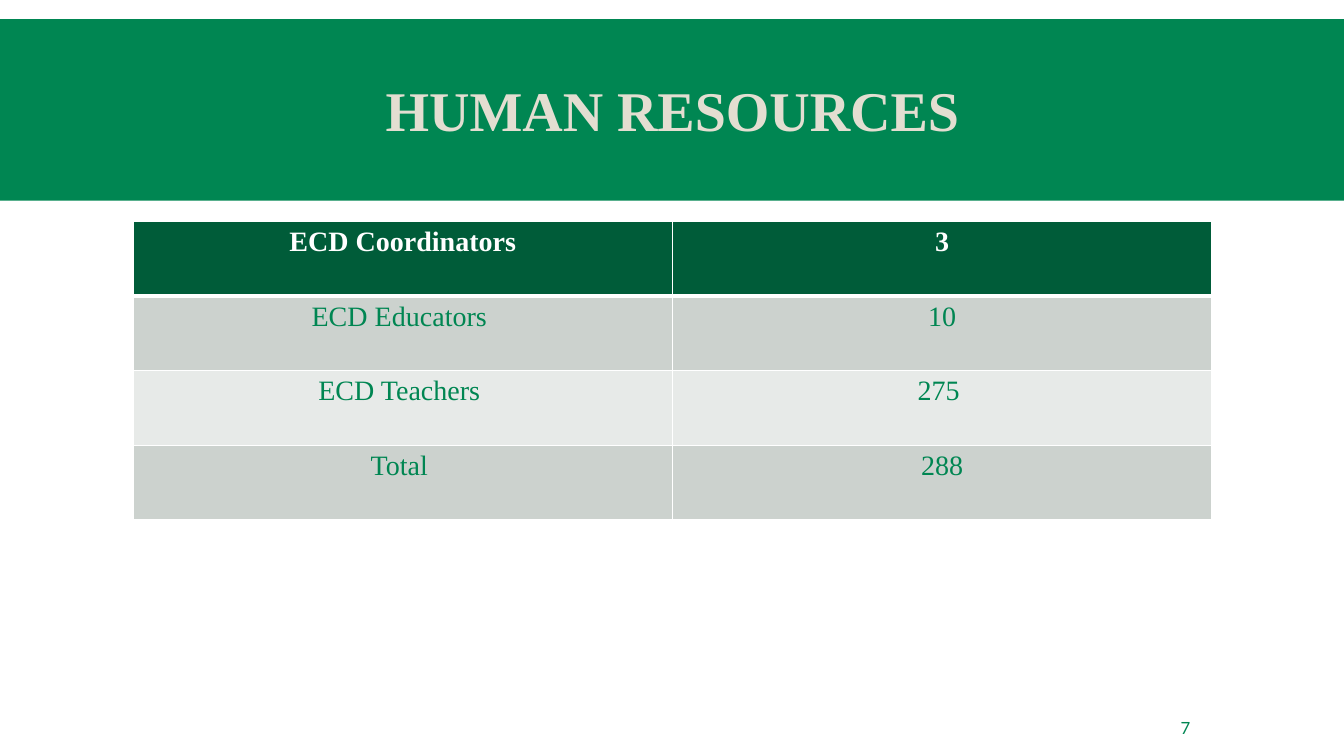
from lxml.etree import SubElement
from pptx import Presentation
from pptx.dml.color import RGBColor
from pptx.enum.shapes import MSO_SHAPE
from pptx.enum.text import MSO_ANCHOR, PP_ALIGN
from pptx.oxml.ns import qn
from pptx.util import Emu, Pt

COLORS = {
    "green": "008652",
    "dark": "005C39",
    "cream": "E3DED1",
    "white": "FFFFFF",
    "band1": "CCD2CE",
    "band2": "E7EAE8",
}
SERIF = "Times New Roman"
STAFF = [
    ("ECD Coordinators", "3"),
    ("ECD Educators ", "10"),
    ("ECD Teachers ", "275 "),
    ("Total ", "288"),
]


def px(n):
    return Emu(n * 9144)


def rgb(name):
    return RGBColor.from_string(COLORS[name])


class Deck:
    def __init__(self, width, height):
        self.prs = Presentation()
        self.prs.slide_width, self.prs.slide_height = px(width), px(height)
        self.slide = self.prs.slides.add_slide(self.prs.slide_layouts[5])

    def set_text(self, tf, text, size, color, font=SERIF, bold=False, align=PP_ALIGN.CENTER):
        tf.text = text
        p = tf.paragraphs[0]
        p.alignment = align
        f = p.runs[0].font
        f.size, f.name, f.bold = Pt(size), font, bold
        f.color.rgb = rgb(color)
        return p

    def band(self, x, y, w, h, color):
        sp = self.slide.shapes.add_shape(MSO_SHAPE.RECTANGLE, px(x), px(y), px(w), px(h))
        sp.shadow.inherit = False
        sp.fill.solid()
        sp.fill.fore_color.rgb = rgb(color)
        sp.line.fill.background()

    def title(self, text, x, y, w, h):
        sp = self.slide.shapes.title
        sp.left, sp.top, sp.width, sp.height = px(x), px(y), px(w), px(h)
        sp.text_frame.vertical_anchor = MSO_ANCHOR.MIDDLE
        p = self.set_text(sp.text_frame, text, 40, "cream", bold=True)
        p.line_spacing = 0.85
        self.slide.shapes.element.append(sp.element)

    def borders(self, cell, row):
        tc_pr = cell._tc.get_or_add_tcPr()
        widths = {"L": 1, "R": 1, "T": 3 if row == 1 else 1, "B": 3 if row == 0 else 1}
        for side, width in widths.items():
            ln = SubElement(tc_pr, qn(f"a:ln{side}"), w=str(Pt(width)))
            fill = SubElement(ln, qn("a:solidFill"))
            SubElement(fill, qn("a:srgbClr"), val=COLORS["white"])

    def table(self, rows, x, y, w, h):
        shape = self.slide.shapes.add_table(len(rows), len(rows[0]), px(x), px(y), px(w), px(h))
        for i, row in enumerate(rows):
            header = i == 0
            fill = "dark" if header else ("band2", "band1")[i % 2]
            for j, text in enumerate(row):
                cell = shape.table.cell(i, j)
                self.borders(cell, i)
                cell.fill.solid()
                cell.fill.fore_color.rgb = rgb(fill)
                self.set_text(cell.text_frame, text, 20, "white" if header else "green", bold=header)

    def page_number(self, text, x, y, w, h):
        tf = self.slide.shapes.add_textbox(px(x), px(y), px(w), px(h)).text_frame
        tf.word_wrap = True
        tf.vertical_anchor = MSO_ANCHOR.MIDDLE
        tf.margin_left = tf.margin_top = tf.margin_bottom = px(5)
        self.set_text(tf, text, 12, "green", font="Lato", align=PP_ALIGN.LEFT)


def main():
    deck = Deck(1333, 750)
    deck.band(0, 19, 1333, 180, "green")
    deck.title("HUMAN RESOURCES", 132, 31, 1070, 165)
    deck.table(STAFF, 132, 220, 1070, 296)
    deck.page_number("7", 1166, 702, 103, 40)
    deck.prs.save("out.pptx")


if __name__ == "__main__":
    main()
